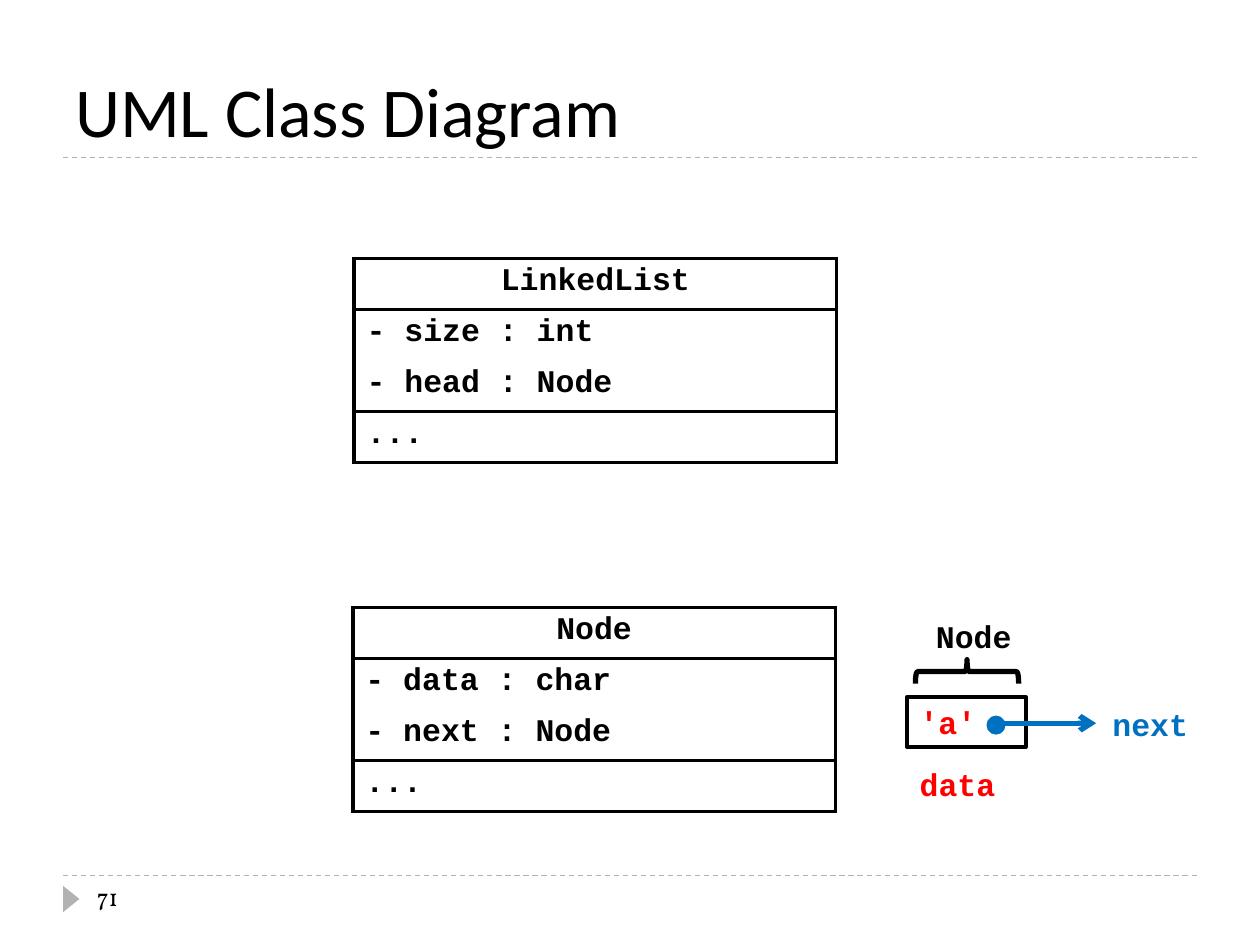
from lxml.etree import SubElement
from pptx import Presentation
from pptx.dml.color import RGBColor
from pptx.enum.dml import MSO_LINE_DASH_STYLE as DASH
from pptx.enum.shapes import MSO_CONNECTOR, MSO_SHAPE as SHAPE
from pptx.enum.text import MSO_ANCHOR as ANCHOR, PP_ALIGN as ALIGN
from pptx.oxml.ns import qn
from pptx.util import Inches, Pt

BLACK, GRAY, RED, BLUE = "000000", "B2B2B2", "FF0000", "0070C0"


def rgb(value):
    return RGBColor.from_string(value)


def write(frame, text, size=18, font="Courier New", color=BLACK, bold=True,
          align=ALIGN.LEFT, anchor=ANCHOR.TOP, wrap=True):
    frame.word_wrap = wrap
    frame.vertical_anchor = anchor
    paragraph = frame.paragraphs[0]
    paragraph.alignment = align
    run = paragraph.add_run()
    run.text = text
    run.font.size = Pt(size)
    run.font.name = font
    run.font.bold = bold
    run.font.color.rgb = rgb(color)


prs = Presentation()
prs.slide_width, prs.slide_height = Inches(10), Inches(7.5)
slide = prs.slides.add_slide(prs.slide_layouts[6])
shapes = slide.shapes

for y in (6.95, 1.25):
    rule = shapes.add_connector(MSO_CONNECTOR.STRAIGHT, Inches(0.5), Inches(y), Inches(9.5), Inches(y))
    rule.line.color.rgb = rgb(GRAY)
    rule.line.width = Pt(0.75)
    rule.line.dash_style = DASH.DASH
    SubElement(rule._element.spPr, qn("a:effectLst"))

page_marker = shapes.add_shape(SHAPE.ISOSCELES_TRIANGLE, Inches(0.46), Inches(7.07), Inches(0.21), Inches(0.13))
page_marker.rotation = 90
page_marker.shadow.inherit = False
page_marker.fill.solid()
page_marker.fill.fore_color.rgb = rgb(GRAY)
page_marker.line.fill.background()

title = shapes.add_textbox(Inches(0.5), Inches(0.25), Inches(9), Inches(1))
write(title.text_frame, "UML Class Diagram", size=40, font="Calibri", bold=False, anchor=ANCHOR.BOTTOM)
page_number = shapes.add_textbox(Inches(0.67), Inches(6.95), Inches(2.17), Inches(0.4))
write(page_number.text_frame, "71", size=14, font="Vollkorn", bold=False)

classes = [
    (2.81, 2.05, ["LinkedList", "- size : int", "- head : Node", "..."]),
    (2.8, 4.82, ["Node", "- data : char", "- next : Node", "..."]),
]
for left, top, members in classes:
    class_box = shapes.add_table(len(members), 1, Inches(left), Inches(top), Inches(3.83), Inches(1.62)).table
    class_box.first_row = class_box.horz_banding = False
    for row, member in enumerate(members):
        cell = class_box.cell(row, 0)
        write(cell.text_frame, member, align=ALIGN.LEFT if row else ALIGN.CENTER)
        open_side = {1: "lnB", 2: "lnT"}.get(row)
        for side in ("lnL", "lnR", "lnT", "lnB"):
            border = SubElement(cell._tc.get_or_add_tcPr(), qn(f"a:{side}"), w=str(Pt(2.25)))
            if side == open_side:
                SubElement(border, qn("a:noFill"))
            else:
                border_fill = SubElement(border, qn("a:solidFill"))
                SubElement(border_fill, qn("a:srgbClr"), val=BLACK)
        cell.fill.background()

node_box = shapes.add_shape(SHAPE.RECTANGLE, Inches(7.2), Inches(5.53), Inches(0.94), Inches(0.4))
node_box.shadow.inherit = False
node_box.fill.background()
node_box.line.color.rgb = rgb(BLACK)
node_box.line.width = Pt(2.25)
write(node_box.text_frame, "'a'", color=RED)

next_arrow = shapes.add_connector(MSO_CONNECTOR.STRAIGHT, Inches(7.9), Inches(5.74), Inches(8.7), Inches(5.74))
next_arrow.line.color.rgb = rgb(BLUE)
next_arrow.line.width = Pt(3)
SubElement(next_arrow.line._get_or_add_ln(), qn("a:tailEnd"), type="arrow")
SubElement(next_arrow._element.spPr, qn("a:effectLst"))

next_origin = shapes.add_shape(SHAPE.OVAL, Inches(7.84), Inches(5.69), Inches(0.13), Inches(0.13))
next_origin.shadow.inherit = False
next_origin.fill.solid()
next_origin.fill.fore_color.rgb = rgb(BLUE)
next_origin.line.color.rgb = rgb(BLUE)
next_origin.line.width = Pt(1.5)

node_brace = shapes.add_shape(SHAPE.RIGHT_BRACE, Inches(7.58), Inches(4.92), Inches(0.19), Inches(0.82))
node_brace.rotation = 270
node_brace.shadow.inherit = False
node_brace.fill.background()
node_brace.line.color.rgb = rgb(BLACK)
node_brace.line.width = Pt(3)

labels = [
    ("Node", 7.33, 4.85, 0.83, BLACK),
    ("data", 7.2, 6.02, 0.81, RED),
    ("next", 8.73, 5.55, 0.81, BLUE),
]
for text, left, top, width, color in labels:
    label = shapes.add_textbox(Inches(left), Inches(top), Inches(width), Inches(0.4))
    write(label.text_frame, text, color=color, wrap=False)

prs.save("out.pptx")
